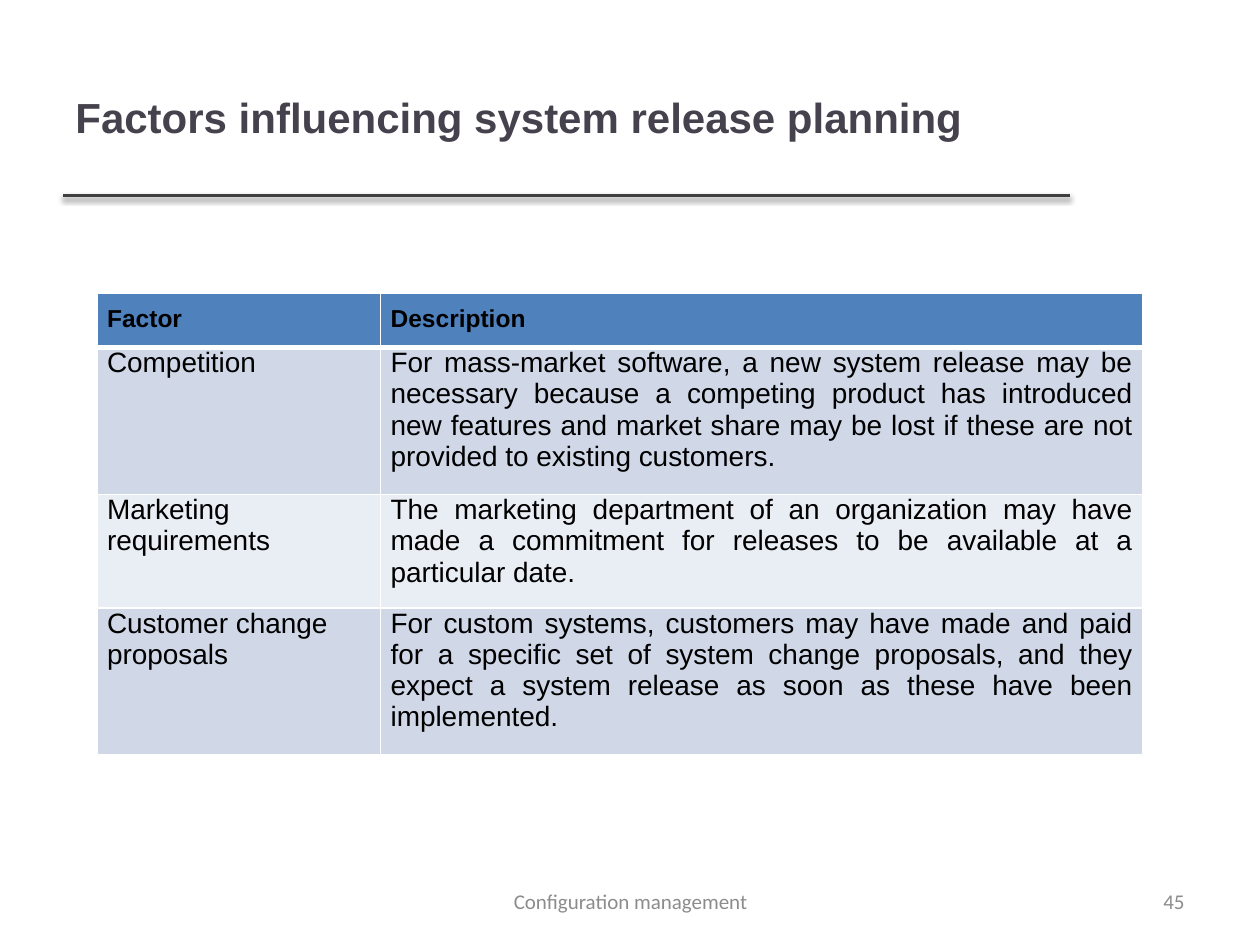
from lxml.etree import SubElement
from pptx import Presentation
from pptx.dml.color import RGBColor
from pptx.enum.shapes import MSO_CONNECTOR
from pptx.enum.text import MSO_ANCHOR, PP_ALIGN
from pptx.oxml.ns import qn
from pptx.util import Inches, Pt

WIDTH, HEIGHT = 10, 7.5
MARGIN = 0.05  # share of the slide's width
COLORS = {
    "title": "46424D",
    "rule": "404040",
    "shadow": "000000",
    "text": "000000",
    "footer": "8C8C8C",
    "header": "4F81BD",
    "odd_row": "D0D8E8",
    "even_row": "E9EDF4",
    "border": "FFFFFF",
}
COLUMN_WIDTHS = [2.25, 6.05]
ROW_HEIGHTS = [0.41, 1.08, 0.84, 1.08]
FACTORS = [
    ("Factor", "Description"),
    ("Competition",
     "For mass-market software, a new system release may be necessary because "
     "a competing product has introduced new features and market share may be "
     "lost if these are not provided to existing customers."),
    ("Marketing requirements",
     "The marketing department of an organization may have made a commitment "
     "for releases to be available at a particular date."),
    ("Customer change proposals",
     "For custom systems, customers may have made and paid for a specific set "
     "of system change proposals, and they expect a system release as soon as "
     "these have been implemented."),
]


def color(name):
    return RGBColor.from_string(COLORS[name])


def across(share):
    return Inches(WIDTH * share)


def down(share):
    return Inches(HEIGHT * share)


def write(text_frame, text, *, size, fill, font="Arial", bold=False,
          align=PP_ALIGN.LEFT):
    text_frame.word_wrap = True
    paragraph = text_frame.paragraphs[0]
    paragraph.alignment = align
    run = paragraph.add_run()
    run.text = text
    run.font.name = font
    run.font.size = Pt(size)
    run.font.bold = bold
    run.font.color.rgb = color(fill)


def add_text(slide, text, left, top, width, height, **text_format):
    """Add a vertically centred text box placed by shares of the slide."""
    shape = slide.shapes.add_textbox(
        across(left), down(top), across(width), down(height))
    shape.text_frame.vertical_anchor = MSO_ANCHOR.MIDDLE
    write(shape.text_frame, text, **text_format)


def add_shadowed_rule(slide, left, right, top):
    rule = slide.shapes.add_connector(
        MSO_CONNECTOR.STRAIGHT, across(left), down(top), across(right), down(top))
    rule.line.color.rgb = color("rule")
    rule.line.width = Pt(2)
    effects = SubElement(rule._element.spPr, qn("a:effectLst"))
    shadow = SubElement(effects, qn("a:outerShdw"), blurRad=str(Pt(3.1)),
                        dist=str(Pt(1.6)), dir="5400000", rotWithShape="0")
    shade = SubElement(shadow, qn("a:srgbClr"), val=COLORS["shadow"])
    SubElement(shade, qn("a:alpha"), val="38000")


def set_borders(cell, **widths):
    """Draw cell borders; widths in points are keyed by side: L, R, T, B."""
    properties = cell._tc.get_or_add_tcPr()
    for side, width in widths.items():
        line = SubElement(properties, qn(f"a:ln{side}"), w=str(Pt(width)))
        fill = SubElement(line, qn("a:solidFill"))
        SubElement(fill, qn("a:srgbClr"), val=COLORS["border"])


def format_cell(cell, text, row, column):
    is_header = row == 0
    set_borders(cell, L=1, R=1, T=3 if row == 1 else 1, B=3 if is_header else 1)
    cell.fill.solid()
    cell.fill.fore_color.rgb = color(
        "header" if is_header else "odd_row" if row % 2 else "even_row")
    cell.margin_left = cell.margin_right = Inches(0.08)
    cell.margin_top = Inches(0.1 if is_header else 0)
    cell.margin_bottom = Inches(0.1)
    justified = is_header or column == 1
    write(cell.text_frame, text, size=14 if is_header else 16, fill="text",
          bold=is_header, align=PP_ALIGN.JUSTIFY if justified else PP_ALIGN.LEFT)


def add_factor_table(slide, left, top):
    table = slide.shapes.add_table(
        len(FACTORS), len(COLUMN_WIDTHS), across(left), down(top),
        Inches(sum(COLUMN_WIDTHS)), Inches(sum(ROW_HEIGHTS))).table
    for column, width in zip(table.columns, COLUMN_WIDTHS):
        column.width = Inches(width)
    for row, height in zip(table.rows, ROW_HEIGHTS):
        row.height = Inches(height)
    for row, texts in enumerate(FACTORS):
        for column, text in enumerate(texts):
            format_cell(table.cell(row, column), text, row, column)


def main():
    presentation = Presentation()
    presentation.slide_width = Inches(WIDTH)
    presentation.slide_height = Inches(HEIGHT)
    slide = presentation.slides.add_slide(presentation.slide_layouts[6])

    add_shadowed_rule(slide, MARGIN, 0.849, 0.207)
    add_text(slide, "Factors influencing system release planning",
             MARGIN, 0.04, 0.798, 0.167, size=24, fill="title", bold=True)
    add_factor_table(slide, 0.077, 0.31)

    footer = {"size": 12, "fill": "footer", "font": "Calibri"}
    footer_top, footer_height = 0.927, 0.053
    add_text(slide, "45", 0.717, footer_top, 0.233, footer_height,
             align=PP_ALIGN.RIGHT, **footer)
    add_text(slide, "Configuration management", 0.342, footer_top, 0.317,
             footer_height, align=PP_ALIGN.CENTER, **footer)

    presentation.save("out.pptx")


if __name__ == "__main__":
    main()
